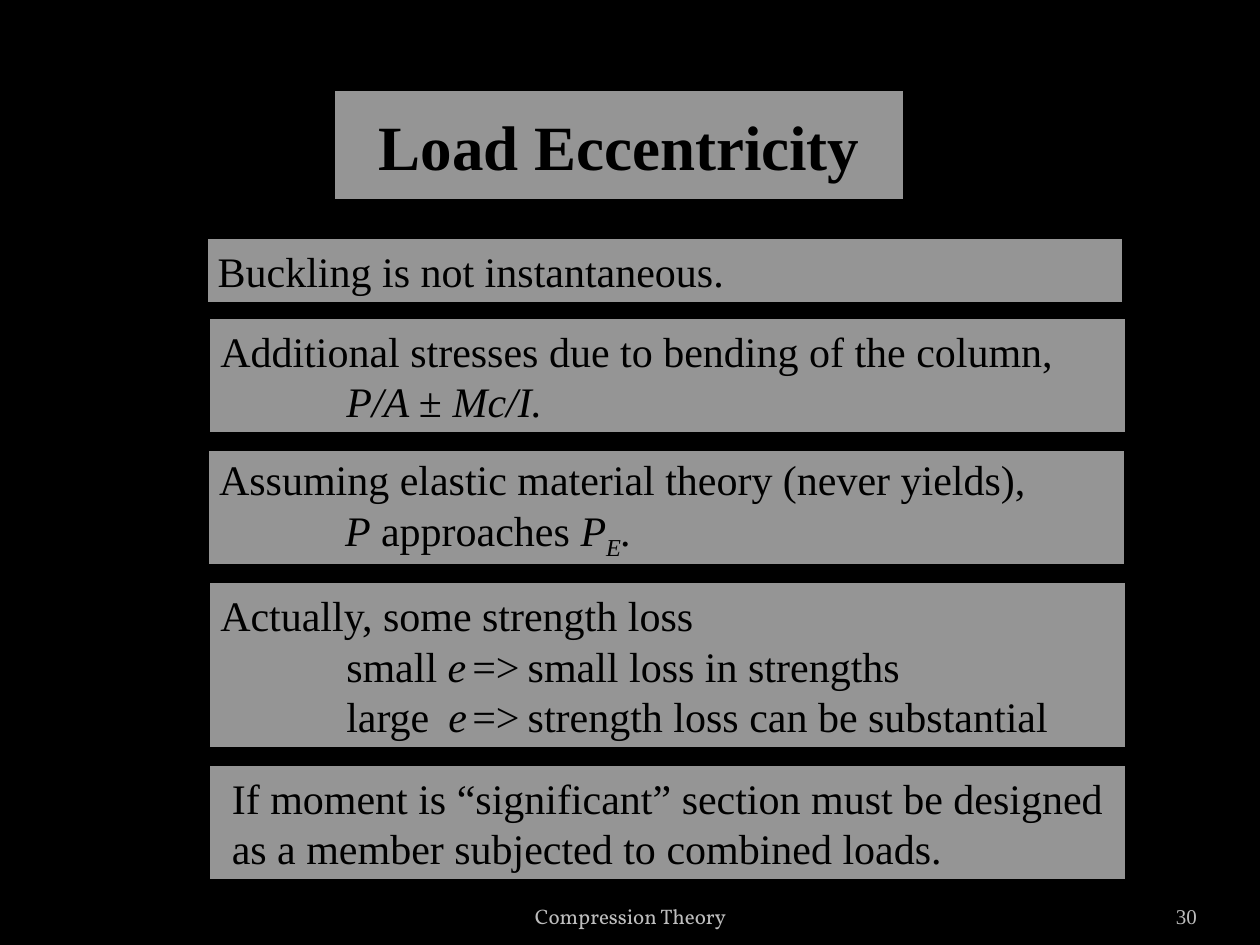
from pptx import Presentation, util as u
from pptx.dml import color
from pptx.enum import shapes, text
from pptx.oxml import ns
from lxml import etree


def rgb(value):
    return color.RGBColor.from_string(value)


class Deck:
    serif = "Times New Roman"
    ink = "000000"
    panel = "F2F2F2"
    opacity = 62

    def __init__(self, prs):
        self.s = prs.slides.add_slide(prs.slide_layouts[5])
        self.s.background.fill.solid()
        self.s.background.fill.fore_color.rgb = rgb("000000")

    def style_panel(self, sp):
        sp.fill.solid()
        sp.fill.fore_color.rgb = rgb(self.panel)
        tint = sp._element.spPr.find(ns.qn("a:solidFill"))[0]
        etree.SubElement(tint, ns.qn("a:alpha"), val=str(self.opacity * 1000))
        sp.line.color.rgb = rgb(self.ink)
        sp.line.width = u.Pt(3)

    def frame(self, sp, anchor):
        tf = sp.text_frame
        tf.word_wrap = True
        tf.auto_size = text.MSO_AUTO_SIZE.NONE
        tf.vertical_anchor = anchor
        return tf

    def run(self, p, words, size, style="", font=serif, ink=ink):
        r = p.add_run()
        r.text = words
        r.font.name = font
        r.font.size = u.Pt(size)
        r.font.color.rgb = rgb(ink)
        r.font.bold = "b" in style
        r.font.italic = "i" in style
        if "s" in style:
            r._r.get_or_add_rPr().set("baseline", "-25000")

    def title(self, words, left, top, width, height):
        sp = self.s.shapes.title
        sp.left, sp.top = u.Inches(left), u.Inches(top)
        sp.width, sp.height = u.Inches(width), u.Inches(height)
        self.style_panel(sp)
        p = self.frame(sp, text.MSO_ANCHOR.MIDDLE).paragraphs[0]
        p.alignment = text.PP_ALIGN.CENTER
        self.run(p, words, 36, "b")

    def statement(self, left, top, height, lines, tabs=(1,), inset=0.1):
        sp = self.s.shapes.add_shape(
            shapes.MSO_SHAPE.RECTANGLE, u.Inches(left), u.Inches(top),
            u.Inches(7.3), u.Inches(height))
        sp.shadow.inherit = False
        self.style_panel(sp)
        tf = self.frame(sp, text.MSO_ANCHOR.MIDDLE)
        tf.margin_left = u.Inches(inset)
        for i, line in enumerate(lines):
            p = tf.add_paragraph() if i else tf.paragraphs[0]
            p.alignment = text.PP_ALIGN.LEFT
            stops = etree.SubElement(p._p.get_or_add_pPr(), ns.qn("a:tabLst"))
            for stop in tabs:
                etree.SubElement(stops, ns.qn("a:tab"),
                                 pos=str(u.Inches(stop)), algn="l")
            for words, style in line:
                self.run(p, words, 24, style)

    def footer(self, words, left, width, align, font, ink, inset):
        sp = self.s.shapes.add_textbox(
            u.Inches(left), u.Inches(7.02), u.Inches(width), u.Inches(0.4))
        tf = self.frame(sp, text.MSO_ANCHOR.BOTTOM)
        tf.margin_left = tf.margin_right = u.Inches(inset)
        p = tf.paragraphs[0]
        p.alignment = align
        self.run(p, words, 12, font=font, ink=ink)


def main():
    prs = Presentation()
    prs.slide_width, prs.slide_height = u.Inches(10), u.Inches(7.5)
    deck = Deck(prs)
    deck.title("Load Eccentricity", 2.64, 0.7, 4.55, 0.9)
    deck.statement(1.63, 1.88, 0.54, [[("Buckling is not instantaneous.", "")]])
    deck.statement(1.65, 2.51, 0.94, [
        [("Additional stresses due to bending of the column,", "")],
        [("\t", ""), ("P/A ", "i"), ("± ", ""), ("Mc/I.", "i")]])
    deck.statement(1.64, 3.56, 0.94, [
        [("Assuming elastic material theory (never yields),", "")],
        [("\t", ""), ("P", "i"), (" approaches ", ""), ("P", "i"),
         ("E", "is"), (".", "i")]])
    deck.statement(1.65, 4.61, 1.34, [
        [("Actually, some strength loss", "")],
        [("\tsmall ", ""), ("e\t", "i"), ("=>\tsmall loss in strengths", "")],
        [("\tlarge\t", ""), ("e\t", "i"),
         ("=>\tstrength loss can be substantial", "")]],
        tabs=(1, 1.81, 2, 2.44))
    deck.statement(1.65, 6.06, 0.94, [
        [("If moment is “significant” section must be designed "
          "as a member subjected to combined loads.", "")]], inset=0.19)
    deck.footer("30", 8.67, 0.83, text.PP_ALIGN.RIGHT, deck.serif, "BCBCBC", 0)
    deck.footer("Compression Theory", 3.42, 3.17, text.PP_ALIGN.CENTER,
                "Vollkorn", "BDBDBD", 0.1)
    prs.save("out.pptx")


if __name__ == "__main__":
    main()
